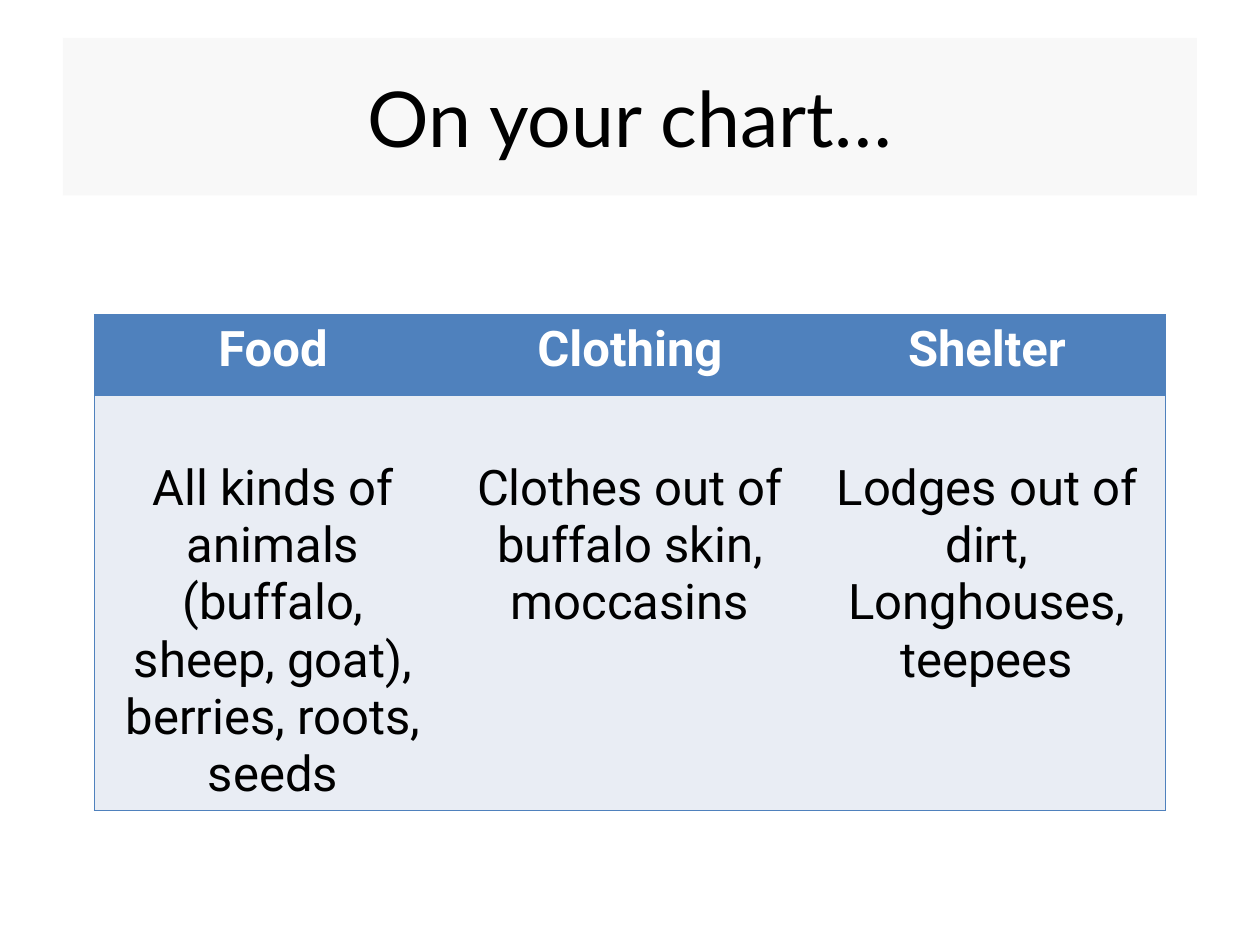
from lxml import etree
from pptx import Presentation, util as u
from pptx.dml.color import RGBColor
from pptx.enum import shapes, text
from pptx.oxml.ns import qn

PX = 9144
COLORS = {"band": "F8F8F8", "ink": "000000", "blue": "4F81BD", "pale": "E9EDF4", "white": "FFFFFF"}
TITLE = {"name": "Lato", "size": u.Pt(44), "bold": False}
HEADING = {"name": "Roboto", "size": u.Pt(28), "bold": True}
BODY = {**HEADING, "bold": False}
NEEDS = {
    "Food": "All kinds of animals (buffalo, sheep, goat), berries, roots, seeds",
    "Clothing": "Clothes out of buffalo skin, moccasins",
    "Shelter": "Lodges out of dirt, Longhouses, teepees",
}


def paint(fill, color):
    """Give a fill one solid colour from the palette."""
    fill.solid()
    fill.fore_color.rgb = RGBColor.from_string(COLORS[color])


def write(frame, words, style, color):
    """Write one centred paragraph in the given style."""
    line = frame.paragraphs[0]
    line.text = words
    line.alignment = text.PP_ALIGN.CENTER
    for key, value in style.items():
        setattr(line.font, key, value)
    paint(line.font.fill, color)


def border(cell, visible):
    """Draw the named sides in blue and clear the others."""
    props = cell._tc.get_or_add_tcPr()
    for side in "LRTB":
        edge = etree.SubElement(props, qn(f"a:ln{side}"), w=str(u.Pt(1)))
        if side in visible:
            solid = etree.SubElement(edge, qn("a:solidFill"))
            etree.SubElement(solid, qn("a:srgbClr"), val=COLORS["blue"])
        else:
            etree.SubElement(edge, qn("a:noFill"))


def add_title(slide, box, words):
    """Place the title band in its box."""
    band = slide.shapes.add_shape(shapes.MSO_SHAPE.RECTANGLE, *(n * PX for n in box))
    band.shadow.inherit = False
    paint(band.fill, "band")
    band.line.fill.background()
    band.text_frame.word_wrap = True
    band.text_frame.vertical_anchor = text.MSO_ANCHOR.MIDDLE
    write(band.text_frame, words, TITLE, "ink")


def add_needs(slide, box, needs, head_height):
    """Place a table with one column for each need."""
    left, top, width, height = (n * PX for n in box)
    table = slide.shapes.add_table(2, len(needs), left, top, width, height).table
    table.first_row = table.horz_banding = False
    table.rows[0].height = head_height * PX
    table.rows[1].height = height - head_height * PX
    last = len(needs) - 1
    for column, pair in enumerate(needs.items()):
        sides = "TB" + "L" * (column == 0) + "R" * (column == last)
        looks = ((HEADING, "white", "blue"), (BODY, "ink", "pale"))
        for row, (words, (style, ink, back)) in enumerate(zip(pair, looks)):
            cell = table.cell(row, column)
            border(cell, sides)
            paint(cell.fill, back)
            write(cell.text_frame, words, style, ink)
        cell.margin_top = 51 * PX


def main():
    """Build the slide and save it."""
    deck = Presentation()
    deck.slide_width, deck.slide_height = 1000 * PX, 750 * PX
    slide = deck.slides.add_slide(deck.slide_layouts[6])
    add_title(slide, (50, 30, 900, 125), "On your chart…")
    add_needs(slide, (75, 250, 850, 392), NEEDS, 64)
    deck.save("out.pptx")


if __name__ == "__main__":
    main()
